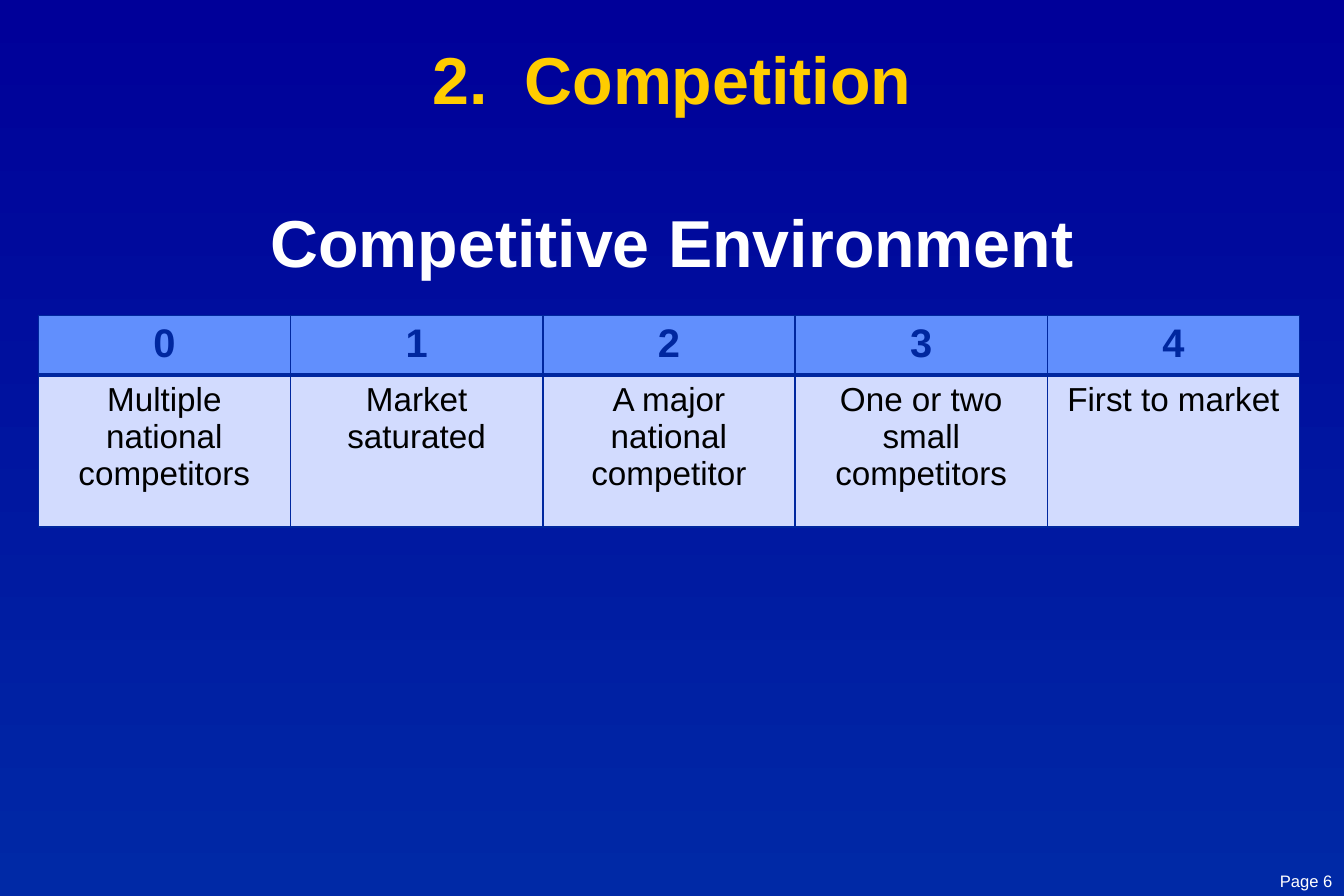
import pptx
import pptx.util
import pptx.dml.color
import pptx.enum.text
import pptx.oxml
import pptx.oxml.ns

TITLE = ["2.  Competition", "Competitive Environment"]
PAGE = "Page 6"
RATINGS = [
    ("0", "Multiple national competitors"),
    ("1", "Market saturated"),
    ("2", "A major national competitor"),
    ("3", "One or two small competitors"),
    ("4", "First to market"),
]

THEME = {
    "font": "Arial",
    "background": ("000099", "0029A6"),
    "title": [
        {"size": 40, "color": "FFCC00", "bold": True},
        {"size": 40, "color": "FFFFFF", "bold": True},
    ],
    "page": {"size": 10, "color": "FFFFFF", "bold": False},
    "rows": [
        {"size": 24, "color": "00279F", "bold": True},
        {"size": 20, "color": "000000", "bold": False},
    ],
    "fills": ("618FFD", "D2DBFE"),
    "border": "00279F",
}
WIDTH, HEIGHT = 11.25, 7.5
ROW_HEIGHTS = (0.47, 1.27)
TABLE_LEFT, TABLE_TOP, TABLE_WIDTH = 0.32, 2.64, 10.56
TITLE_GAP = 50
THIN, THICK = 1, 3

Inches, Pt = pptx.util.Inches, pptx.util.Pt
RGB = pptx.dml.color.RGBColor.from_string
ALIGN = pptx.enum.text.PP_ALIGN
ANCHOR = pptx.enum.text.MSO_ANCHOR


def write(p, text, style, align):
    p.alignment = align
    r = p.add_run()
    r.text = text
    values = {"name": THEME["font"], "size": Pt(style["size"]), "bold": style["bold"]}
    for name, value in values.items():
        setattr(r.font, name, value)
    r.font.color.rgb = RGB(style["color"])


def format_frame(tf, values):
    for name, value in values.items():
        setattr(tf, name, value)


def place(sp, left, top, width, height):
    box = {"left": left, "top": top, "width": width, "height": height}
    for name, value in box.items():
        setattr(sp, name, Inches(value))


def add_borders(cell, widths):
    tc_pr = cell._tc.get_or_add_tcPr()
    for i, (side, width) in enumerate(widths.items()):
        line = pptx.oxml.parse_xml(
            f'<a:{side} {pptx.oxml.ns.nsdecls("a")} w="{Pt(width)}"><a:solidFill>'
            f'<a:srgbClr val="{THEME["border"]}"/></a:solidFill></a:{side}>'
        )
        tc_pr.insert(i, line)


def add_background(s):
    fill = s.background.fill
    fill.gradient()
    fill.gradient_angle = 270
    for stop, position, color in zip(fill.gradient_stops, (0, 1), THEME["background"]):
        stop.position = position
        stop.color.rgb = RGB(color)


def add_title(s):
    sp = s.shapes.title
    place(sp, WIDTH * 0.05, HEIGHT * 0.04, WIDTH * 0.9, 2.07)
    tf = sp.text_frame
    margins = {f"margin_{side}": 0 for side in ("left", "top", "right", "bottom")}
    format_frame(tf, {"word_wrap": True, "vertical_anchor": ANCHOR.MIDDLE, **margins})
    for i, (text, style) in enumerate(zip(TITLE, THEME["title"])):
        p = tf.add_paragraph() if i else tf.paragraphs[0]
        p.line_spacing = 1.0
        p.space_before = Pt(TITLE_GAP * i)
        write(p, text, style, ALIGN.CENTER)


def add_page(s):
    width, height = 1.18, 0.26
    sp = s.shapes.add_textbox(0, 0, 0, 0)
    place(sp, WIDTH - width, HEIGHT - height, width, height)
    tf = sp.text_frame
    format_frame(tf, {"word_wrap": True})
    write(tf.paragraphs[0], PAGE, THEME["page"], ALIGN.RIGHT)


def add_ratings(s):
    frame = s.shapes.add_table(
        len(ROW_HEIGHTS), len(RATINGS), Inches(TABLE_LEFT), Inches(TABLE_TOP),
        Inches(TABLE_WIDTH), Inches(sum(ROW_HEIGHTS)),
    )
    table = frame.table
    for row, height in zip(table.rows, ROW_HEIGHTS):
        row.height = Inches(height)
    for col, rating in enumerate(RATINGS):
        table.columns[col].width = Inches(TABLE_WIDTH / len(RATINGS))
        for row, text in enumerate(rating):
            cell = table.cell(row, col)
            cell.fill.solid()
            cell.fill.fore_color.rgb = RGB(THEME["fills"][row])
            cell.vertical_anchor = ANCHOR.TOP
            write(cell.text_frame.paragraphs[0], text, THEME["rows"][row], ALIGN.CENTER)
            top, bottom = (THICK, THIN) if row else (THIN, THICK)
            add_borders(cell, {"lnL": THIN, "lnR": THIN, "lnT": top, "lnB": bottom})


def main():
    prs = pptx.Presentation()
    prs.slide_width, prs.slide_height = Inches(WIDTH), Inches(HEIGHT)
    s = prs.slides.add_slide(prs.slide_layouts[5])
    add_background(s)
    add_title(s)
    add_page(s)
    add_ratings(s)
    prs.save("out.pptx")


if __name__ == "__main__":
    main()
